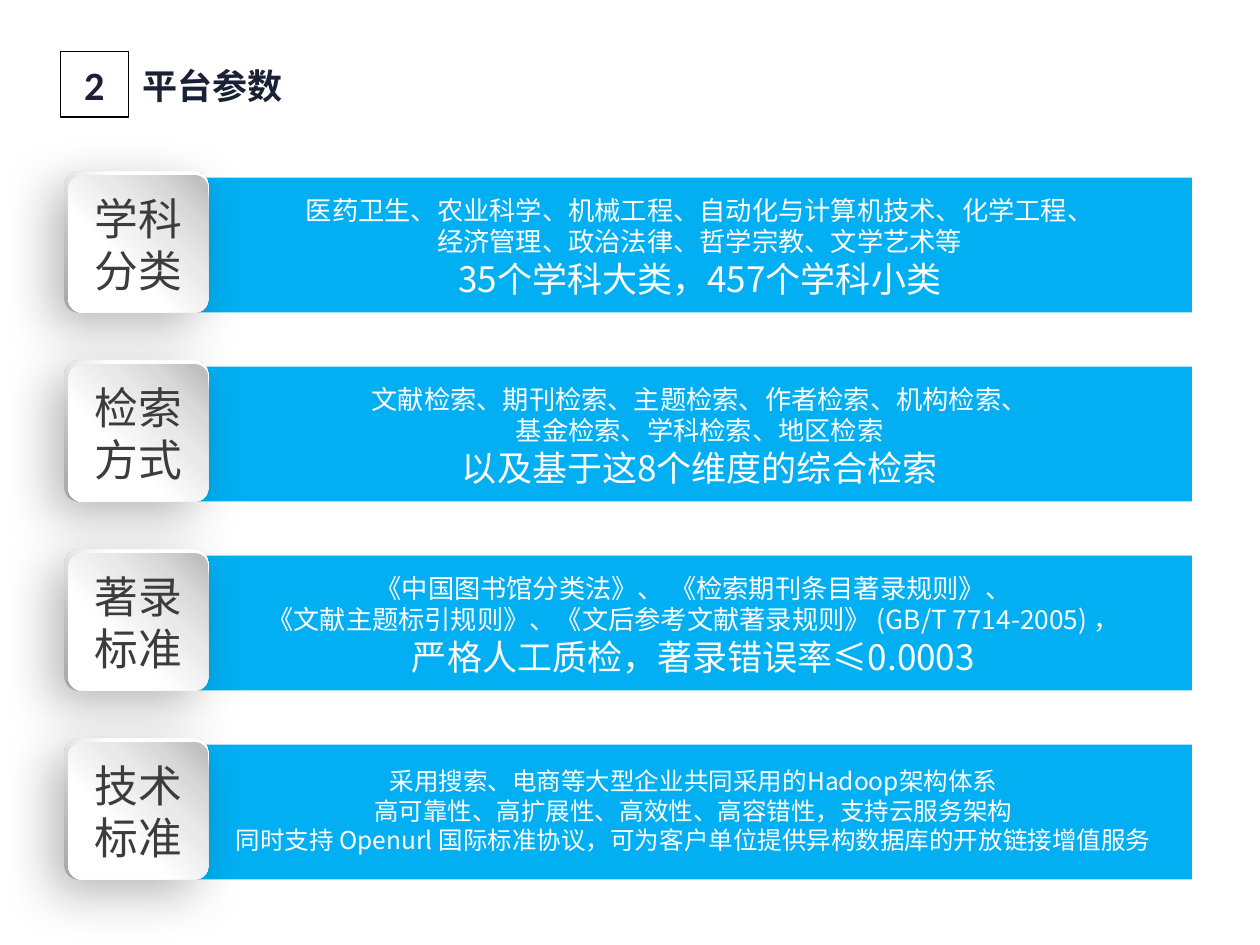
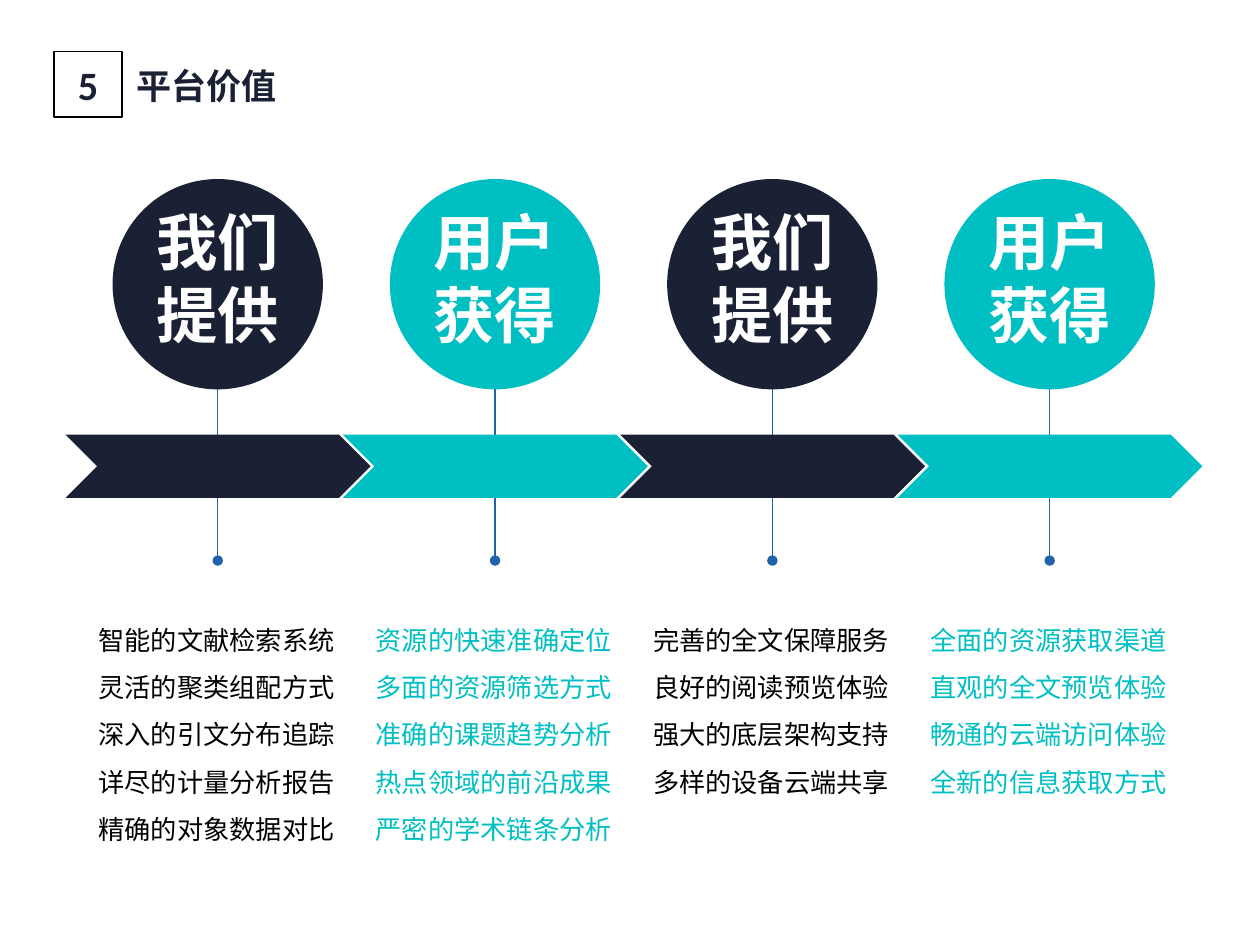
from lxml import etree
from pptx import Presentation
from pptx.dml.color import RGBColor
from pptx.enum import shapes as sh, text as tx
from pptx.oxml import ns
from pptx.util import Cm, Pt

NAVY = RGBColor(0x1B, 0x21, 0x35)
TEAL = RGBColor(0x00, 0xBF, 0xC3)
SKY = RGBColor(0x02, 0xAF, 0xF3)
BLUE = RGBColor(0x20, 0x63, 0xAA)
GREY = RGBColor(0x3C, 0x3C, 0x3C)
BLACK = RGBColor(0, 0, 0)
WHITE = RGBColor(255, 255, 255)

SANS = "Noto Sans CJK SC"
ROUND = "TeX Gyre Adventor"
KIND = sh.MSO_SHAPE
LEFT, MID = tx.PP_ALIGN.LEFT, tx.PP_ALIGN.CENTER
TOP, HALF = tx.MSO_ANCHOR.TOP, tx.MSO_ANCHOR.MIDDLE

# Gradient stops (percent, colour) and focus corner of a tile's two layers
RIM = [(0, "FFFFFF"), (35, "FFFFFF"), (74, "BFBFBF"), (100, "A6A6A6")]
FACE = [(0, "FFFFFF"), (35, "FFFFFF"), (63, "E9E9E9"), (79, "D9D9D9"),
        (95, "BFBFBF")]
UPPER = dict(l=100, t=0, r=0, b=100)
LOWER = dict(l=0, t=100, r=100, b=0)

# Tile label, text lines, sizes, text box (left, top, width) within the row
ROWS = [
    ("学科分类",
     ["医药卫生、农业科学、机械工程、自动化与计算机技术、化学工程、",
      "经济管理、政治法律、哲学宗教、文学艺术等",
      "35个学科大类，457个学科小类"],
     (15, 15, 20), (3.93, 0.33, 17.75)),
    ("检索方式",
     ["文献检索、期刊检索、主题检索、作者检索、机构检索、",
      "基金检索、学科检索、地区检索",
      "以及基于这8个维度的综合检索"],
     (15, 15, 20), (3.93, 0.33, 17.75)),
    ("著录标准",
     ["《中国图书馆分类法》、 《检索期刊条目著录规则》、",
      "《文献主题标引规则》、《文后参考文献著录规则》 (GB/T 7714-2005) ，",
      "严格人工质检，著录错误率≤0.0003"],
     (15, 15, 20), (2.94, 0.33, 19.48)),
    ("技术标准",
     ["采用搜索、电商等大型企业共同采用的Hadoop架构体系",
      "高可靠性、高扩展性、高效性、高容错性，支持云服务架构",
      "同时支持 Openurl 国际标准协议，可为客户单位提供异构数据库的开放链接增值服务"],
     (14, 14, 14), (2.94, 0.43, 19.48)),
]

GIVE, GAIN = ["我们", "提供"], ["用户", "获得"]
STEPS = [
    (GIVE, NAVY, BLACK,
     ["智能的文献检索系统", "灵活的聚类组配方式", "深入的引文分布追踪",
      "详尽的计量分析报告", "精确的对象数据对比"]),
    (GAIN, TEAL, TEAL,
     ["资源的快速准确定位", "多面的资源筛选方式", "准确的课题趋势分析",
      "热点领域的前沿成果", "严密的学术链条分析"]),
    (GIVE, NAVY, BLACK,
     ["完善的全文保障服务", "良好的阅读预览体验", "强大的底层架构支持",
      "多样的设备云端共享"]),
    (GAIN, TEAL, TEAL,
     ["全面的资源获取渠道", "直观的全文预览体验", "畅通的云端访问体验",
      "全新的信息获取方式"]),
]


def node(parent, tag, **attrs):
    """Append a DrawingML element to parent."""
    child = etree.SubElement(parent, ns.qn("a:" + tag))
    for key, value in attrs.items():
        child.set(key, str(value))
    return child


def write(shape, lines, sizes=15, font=SANS, color=WHITE, bold=False,
          align=MID, anchor=TOP, space=1.0, wrap=True, plain=False):
    """Fill a shape with one paragraph per line; plain drops list bullets."""
    frame = shape.text_frame
    frame.word_wrap = wrap
    frame.auto_size = tx.MSO_AUTO_SIZE.NONE
    frame.vertical_anchor = anchor
    if isinstance(sizes, int):
        sizes = [sizes] * len(lines)
    for i, (line, size) in enumerate(zip(lines, sizes)):
        para = frame.paragraphs[0] if i == 0 else frame.add_paragraph()
        if plain:
            props = para._p.get_or_add_pPr()
            props.set("marL", "0")
            props.set("indent", "0")
            node(props, "buNone")
        para.alignment = align
        para.line_spacing = space
        para.space_before = Pt(0)
        run = para.add_run()
        run.text = line
        run.font.size = Pt(size)
        run.font.bold = bold
        run.font.color.rgb = color
        run.font.name = font
        node(run._r.get_or_add_rPr(), "ea", typeface=font)


def place(shape, x, y, w, h):
    shape.left, shape.top, shape.width, shape.height = map(Cm, (x, y, w, h))


def draw(parent, kind, x, y, w, h, fill=None, line=None):
    shape = parent.shapes.add_shape(kind, Cm(x), Cm(y), Cm(w), Cm(h))
    shape.shadow.inherit = False
    if fill is not None:
        shape.fill.solid()
        shape.fill.fore_color.rgb = fill
    else:
        shape.fill.background()
    if line is not None:
        shape.line.color.rgb = line
        shape.line.width = Pt(0.75)
    else:
        shape.line.fill.background()
    return shape


def label(parent, x, y, w, h, lines, **fmt):
    box = parent.shapes.add_textbox(Cm(x), Cm(y), Cm(w), Cm(h))
    write(box, lines, **fmt)


def shade(shape, stops, focus):
    """Replace the fill by a radial gradient around a focus corner."""
    props = shape._element.spPr
    props.remove(props.find(ns.qn("a:noFill")))
    grad = etree.Element(ns.qn("a:gradFill"), rotWithShape="1")
    steps = node(grad, "gsLst")
    for pos, color in stops:
        node(node(steps, "gs", pos=pos * 1000), "srgbClr", val=color)
    ring = node(grad, "path", path="circle")
    node(ring, "fillToRect", **{k: v * 1000 for k, v in focus.items()})
    props.find(ns.qn("a:prstGeom")).addnext(grad)


def glow(shape):
    """Give a soft shadow to the lower left."""
    effects = shape._element.spPr.find(ns.qn("a:effectLst"))
    cast = node(effects, "outerShdw", blurRad=Pt(29), dist=Pt(11),
                dir=133 * 60000, algn="tr", rotWithShape=0)
    node(node(cast, "srgbClr", val="000000"), "alpha", val=27000)


def header(slide, x, number, name):
    title = slide.shapes.title
    place(title, x + 1.4, 1.12, 8, 1.14)
    write(title, [name], sizes=20, color=NAVY, bold=True, align=LEFT,
          anchor=HALF, space=1.1)
    box = draw(slide, KIND.RECTANGLE, x, 1.04, 1.37, 1.32, line=BLACK)
    write(box, [number], sizes=23, font="Calibri", color=NAVY, bold=True,
          anchor=HALF)


def tile(parent, x, y, name):
    rim = draw(parent, KIND.ROUNDED_RECTANGLE, x, y, 2.9, 2.84)
    face = draw(parent, KIND.ROUNDED_RECTANGLE, x + 0.08, y + 0.07, 2.82, 2.77)
    for part, stops, focus in ((rim, RIM, UPPER), (face, FACE, LOWER)):
        part.adjustments[0] = 0.097
        shade(part, stops, focus)
    glow(rim)
    write(face, [name], sizes=25, color=GREY, anchor=HALF)


def row(slide, x, y, name, lines, sizes, area):
    group = slide.shapes.add_group_shape()
    draw(group, KIND.RECTANGLE, x + 2.64, y + 0.12, 20.09, 2.72, fill=SKY)
    tile(group, x, y, name)
    dx, dy, width = area
    label(group, x + dx, y + dy, width, 2.39, lines, sizes=sizes)


def stem(slide, x, top, end):
    line = slide.shapes.add_connector(sh.MSO_CONNECTOR.STRAIGHT,
                                      Cm(x), Cm(top), Cm(x), Cm(end))
    line.line.color.rgb = BLUE
    line.line.width = Pt(0.75)
    node(line.line._get_or_add_ln(), "tailEnd", type="oval")
    node(line._element.spPr, "effectLst")


def step(slide, x, y, holder, name, fill, ink, items):
    """One column: circle, stem, chevron and the list below."""
    stem(slide, x + 3.07, y + 3.6, y + 7.69)
    draw(slide, KIND.OVAL, x + 0.95, y, 4.24, 4.24, fill=fill)
    draw(slide, KIND.CHEVRON, x, y + 5.15, 6.15, 1.28, fill=fill)
    label(slide, x + 1.57, y + 0.38, 3, 3.25, name, sizes=35, font=ROUND,
          bold=True, wrap=False)
    place(holder, x + 0.41, y + 8.53, 5.41, 5.05)
    write(holder, items, color=ink, align=LEFT, space=1.5, plain=True)


def params(deck):
    slide = deck.slides.add_slide(deck.slide_layouts.get_by_name("Title Only"))
    header(slide, 1.22, "2", "平台参数")
    for i, parts in enumerate(ROWS):
        row(slide, 1.3, 3.46 + 3.81 * i, *parts)


def values(deck):
    slide = deck.slides.add_slide(deck.slide_layouts.get_by_name("Comparison"))
    header(slide, 1.09, "5", "平台价值")
    for i, parts in enumerate(STEPS):
        step(slide, 1.32 + 5.59 * i, 3.61, slide.placeholders[i + 1], *parts)


def main():
    deck = Presentation()
    deck.slide_width, deck.slide_height = Cm(25.4), Cm(19.05)
    params(deck)
    values(deck)
    deck.save("out.pptx")


if __name__ == "__main__":
    main()
